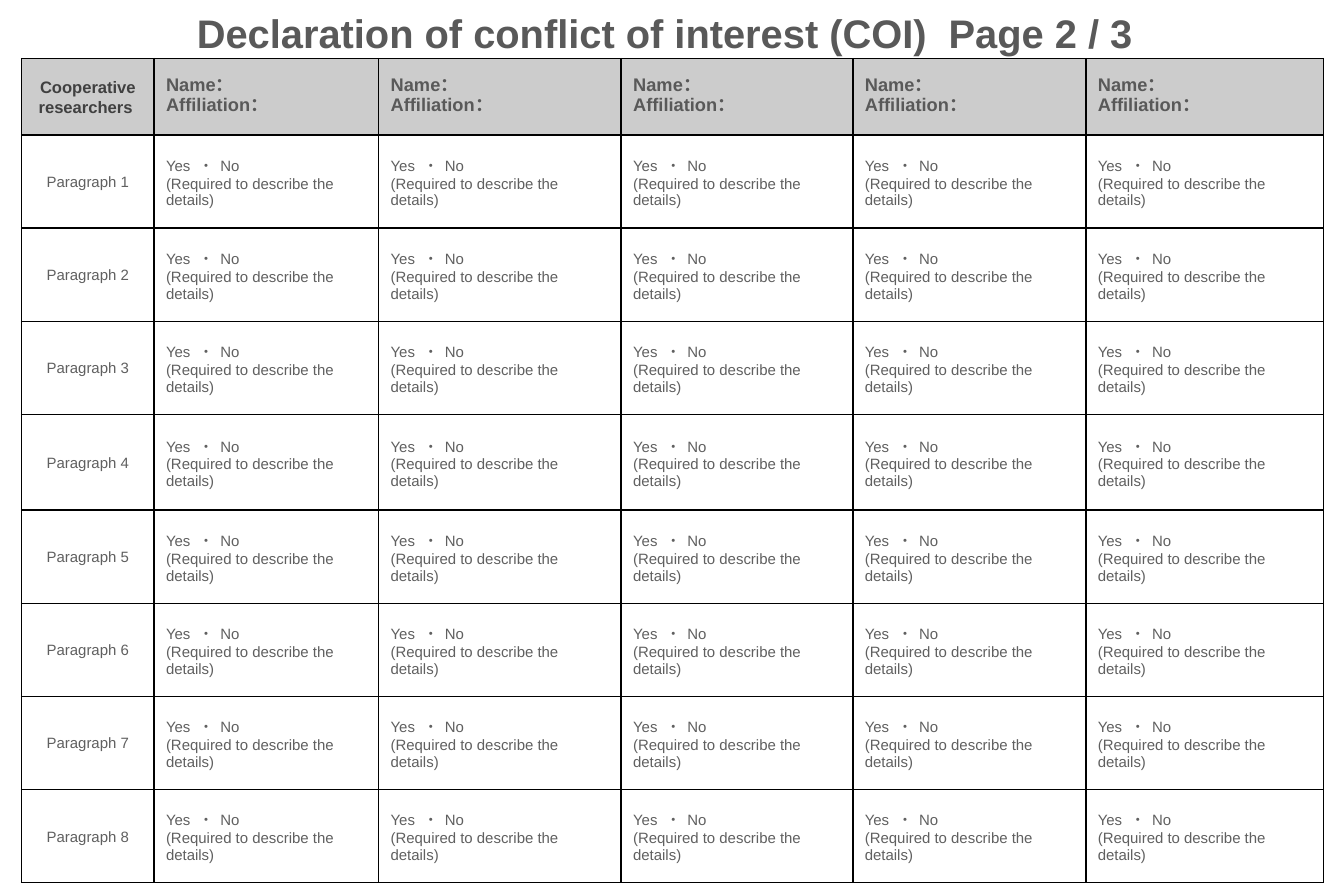
from lxml.etree import SubElement
from pptx import Presentation
from pptx.dml.color import RGBColor
from pptx.enum.text import MSO_ANCHOR, MSO_AUTO_SIZE, PP_ALIGN
from pptx.oxml.ns import qn
from pptx.util import Inches, Pt

COLORS = {
    "title": "595959",
    "corner": "404040",
    "body": "606060",
    "header_fill": "CCCCCC",
    "body_fill": "FFFFFF",
    "border": "000000",
}
COLUMN_WIDTHS = [1.11, 1.88, 2.03, 1.94, 1.95, 1.99]
ROW_HEIGHTS = [0.64, 0.78, 0.78, 0.78, 0.8, 0.78, 0.78, 0.78, 0.78]
RESEARCHER = ["Name：", "Affiliation："]
ANSWER = ["Yes  ・  No", "(Required to describe the details)"]


class DeclarationSlide:
    font_name = "Arial"
    border_width = Pt(1)

    def __init__(self, presentation):
        self.slide = presentation.slides.add_slide(presentation.slide_layouts[5])

    def add_lines(self, frame, lines, size, color, bold=False, align=PP_ALIGN.LEFT, spacing=None):
        for index, line in enumerate(lines):
            paragraph = frame.paragraphs[0] if index == 0 else frame.add_paragraph()
            paragraph.alignment = align
            if spacing:
                paragraph.line_spacing = Pt(spacing)
            run = paragraph.add_run()
            run.text = line
            run.font.name = self.font_name
            run.font.size = Pt(size)
            run.font.bold = bold
            run.font.color.rgb = RGBColor.from_string(COLORS[color])

    def add_title(self, text, left, top, width, height):
        title = self.slide.shapes.title
        title.left, title.top = Inches(left), Inches(top)
        title.width, title.height = Inches(width), Inches(height)
        frame = title.text_frame
        frame.word_wrap = False
        frame.auto_size = MSO_AUTO_SIZE.SHAPE_TO_FIT_TEXT
        frame.vertical_anchor = MSO_ANCHOR.MIDDLE
        self.add_lines(frame, [text], 24, "title", True, PP_ALIGN.CENTER)

    def add_table(self, left, top, column_widths, row_heights):
        table = self.slide.shapes.add_table(
            len(row_heights), len(column_widths), Inches(left), Inches(top),
            Inches(sum(column_widths)), Inches(sum(row_heights))).table
        for column, width in zip(table.columns, column_widths):
            column.width = Inches(width)
        for row, height in zip(table.rows, row_heights):
            row.height = Inches(height)
        return table

    def add_borders(self, cell):
        properties = cell._tc.get_or_add_tcPr()
        for side in ("a:lnL", "a:lnR", "a:lnT", "a:lnB"):
            line = SubElement(properties, qn(side), w=str(self.border_width))
            fill = SubElement(line, qn("a:solidFill"))
            SubElement(fill, qn("a:srgbClr"), val=COLORS["border"])

    def fill_cell(self, cell, lines, fill, **style):
        self.add_borders(cell)
        cell.fill.solid()
        cell.fill.fore_color.rgb = RGBColor.from_string(COLORS[fill])
        cell.vertical_anchor = MSO_ANCHOR.MIDDLE
        cell.margin_left = cell.margin_right = Inches(0.1)
        cell.margin_top = cell.margin_bottom = Inches(0.05)
        self.add_lines(cell.text_frame, lines, **style)


def main():
    presentation = Presentation()
    presentation.slide_width = Inches(11.25)
    presentation.slide_height = Inches(7.5)
    declaration = DeclarationSlide(presentation)
    declaration.add_title(
        "Declaration of conflict of interest (COI)  Page 2 / 3", 1.51, 0.02, 8.11, 0.5)
    table = declaration.add_table(0.18, 0.49, COLUMN_WIDTHS, ROW_HEIGHTS)

    declaration.fill_cell(
        table.cell(0, 0), ["Cooperative researchers "], "header_fill",
        size=10, color="corner", bold=True, align=PP_ALIGN.CENTER, spacing=12)
    for column in range(1, len(COLUMN_WIDTHS)):
        declaration.fill_cell(
            table.cell(0, column), RESEARCHER, "header_fill",
            size=11, color="title", bold=True, spacing=12)
    for row in range(1, len(ROW_HEIGHTS)):
        declaration.fill_cell(
            table.cell(row, 0), [f"Paragraph {row}"], "body_fill",
            size=9, color="body", align=PP_ALIGN.CENTER, spacing=11)
        for column in range(1, len(COLUMN_WIDTHS)):
            declaration.fill_cell(
                table.cell(row, column), ANSWER, "body_fill", size=9, color="body")
    presentation.save("out.pptx")


if __name__ == "__main__":
    main()
